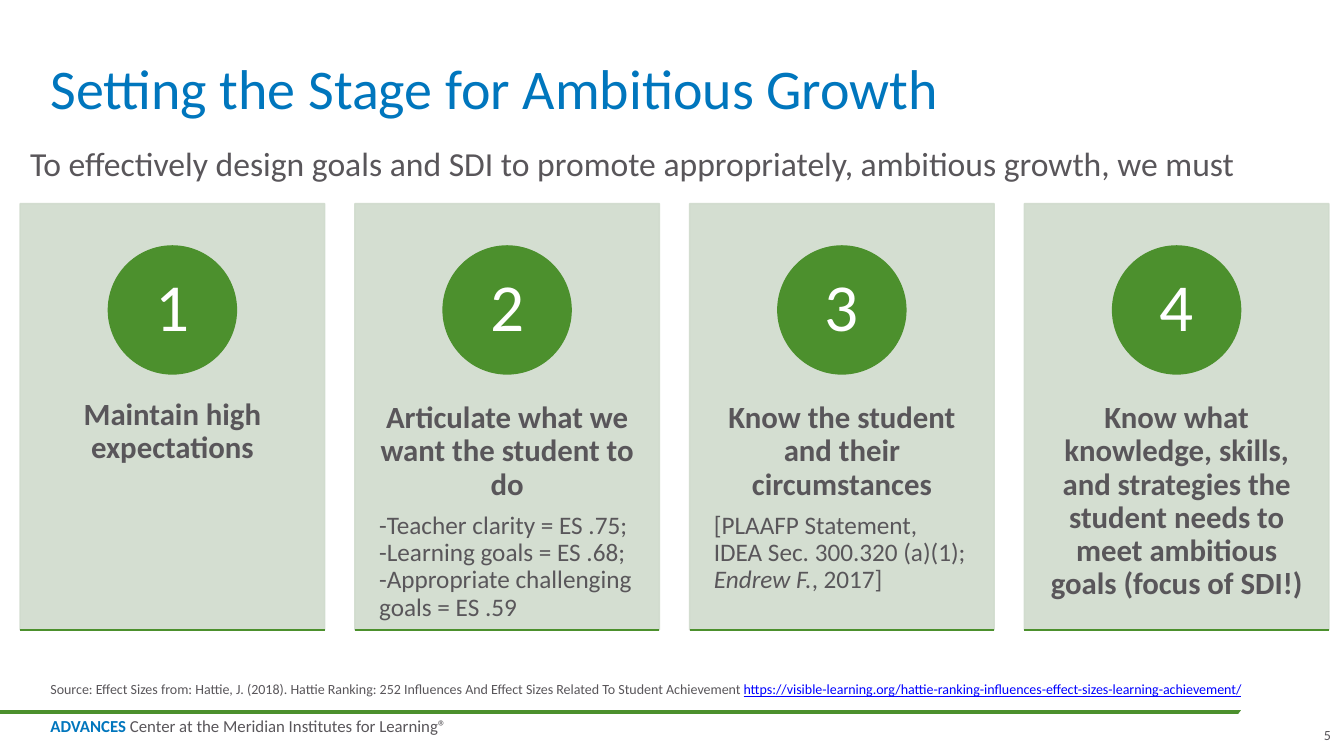
from lxml import etree
from pptx import Presentation
from pptx import util as u
from pptx.dml import color
from pptx.enum import shapes, text
from pptx.oxml import ns

COLORS = {"green": "4C902D", "blue": "0076BD", "gray": "59565A",
          "sage": "D0DBCD", "white": "FFFFFF", "link": "0000FF"}
FONT = "Calibri"
WIDTH, HEIGHT = 13.33, 7.5
MARGIN, GAP = 0.2, 0.3
CARD_WIDTH, CARD_TOP, CARD_HEIGHT = 3.02, 2.02, 4.23
CIRCLE_TOP, CIRCLE_SIZE = 2.44, 1.27
TEXT_TOP, TEXT_HEIGHT = 3.63, 2.54
RULE_TOP, RULE_END = 7.06, 13
CONTENT_LEFT, CONTENT_WIDTH = 0.5, 12.4

CARDS = [
    ("Maintain high expectations", []),
    ("Articulate what we want the student to do",
     [("-Teacher clarity = ES .75; -Learning goals = ES .68; "
       "-Appropriate challenging goals = ES .59", {})]),
    ("Know the student and their circumstances",
     [("[PLAAFP Statement, IDEA Sec. 300.320 (a)(1); ", {}),
       ("Endrew F.", {"italic": True}), (", 2017]", {})]),
    ("Know what knowledge, skills, and strategies the student needs to "
     "meet ambitious goals (focus of SDI!)", []),
]


def rgb(name):
    """Return the named palette colour."""
    return color.RGBColor.from_string(COLORS[name])


def inches(*lengths):
    """Convert lengths to slide units."""
    return [u.Inches(length) for length in lengths]


def set_alpha(paint, percent):
    """Set the opacity of a solid fill element."""
    tint = paint.find(".//" + ns.qn("a:srgbClr"))
    etree.SubElement(tint, ns.qn("a:alpha"), val=str(percent * 1000))


def add_shape(page, kind, area, paint, outlined=True, opacity=100, rotation=0):
    """Add a preset shape with a matching fill and outline."""
    shape = page.shapes.add_shape(kind, *inches(*area))
    shape.shadow.inherit = False
    shape.rotation = rotation
    shape.fill.solid()
    shape.fill.fore_color.rgb = rgb(paint)
    if outlined:
        shape.line.color.rgb = rgb(paint)
        shape.line.width = u.Pt(1)
    else:
        shape.line.fill.background()
    if opacity < 100:
        for fill in shape._element.spPr.iter(ns.qn("a:solidFill")):
            set_alpha(fill, opacity)
    return shape


def add_rule(page, left, top, right, weight):
    """Add a horizontal green line."""
    rule = page.shapes.add_connector(
        shapes.MSO_CONNECTOR.STRAIGHT, *inches(left, top, right, top))
    rule.line.color.rgb = rgb("green")
    rule.line.width = u.Pt(weight)
    etree.SubElement(rule._element.spPr, ns.qn("a:effectLst"))


def add_text(page, area, paragraphs, anchor="TOP", insets=(0, 0), wrap=True):
    """Add a text box holding paragraphs of (spans, format) pairs."""
    box = page.shapes.add_textbox(*inches(*area))
    frame = box.text_frame
    frame.word_wrap = wrap
    frame.vertical_anchor = getattr(text.MSO_ANCHOR, anchor)
    frame.margin_left = frame.margin_right = u.Inches(insets[0])
    frame.margin_top = frame.margin_bottom = u.Inches(insets[1])
    for index, (spans, layout) in enumerate(paragraphs):
        para = frame.add_paragraph() if index else frame.paragraphs[0]
        write(para, spans, **layout)


def write(para, spans, size, paint="gray", bold=False, align="LEFT",
          spacing=1.0, after=0):
    """Fill a paragraph with spans, each with its own overrides."""
    para.alignment = getattr(text.PP_ALIGN, align)
    para.line_spacing = spacing
    para.space_after = u.Pt(after)
    for words, changes in spans:
        span = para.add_run()
        span.text = words
        font = span.font
        font.name = FONT
        font.size = u.Pt(size)
        font.bold = changes.get("bold", bold)
        font.italic = changes.get("italic", False)
        font.underline = changes.get("underline", False)
        font.color.rgb = rgb(changes.get("paint", paint))


def add_card(page, column, heading, details):
    """Add a numbered card in the given column."""
    left = MARGIN + column * (CARD_WIDTH + GAP)
    circle_left = left + (CARD_WIDTH - CIRCLE_SIZE) / 2
    circle = (circle_left, CIRCLE_TOP, CIRCLE_SIZE, CIRCLE_SIZE)
    preset = shapes.MSO_SHAPE
    add_shape(page, preset.RECTANGLE,
              (left, CARD_TOP, CARD_WIDTH, CARD_HEIGHT), "sage", opacity=90)
    paragraphs = [([(heading, {})], dict(size=22, bold=True, align="CENTER",
                                         spacing=0.9, after=7.7))]
    if details:
        paragraphs.append((details, dict(size=18, spacing=0.9)))
    add_text(page, (left, TEXT_TOP, CARD_WIDTH, TEXT_HEIGHT), paragraphs,
             insets=(0.24, 0.36))
    add_shape(page, preset.OVAL, circle, "green")
    add_text(page, circle,
             [([(str(column + 1), {})],
               dict(size=48, paint="white", align="CENTER", spacing=0.9))],
             anchor="MIDDLE", insets=(0.1, 0.01))
    add_rule(page, left, CARD_TOP + CARD_HEIGHT, left + CARD_WIDTH, 1)


def add_footer(page):
    """Add the footer rule with its cut end and the centre name."""
    add_rule(page, 0, RULE_TOP, RULE_END, 3)
    add_shape(page, shapes.MSO_SHAPE.OVAL, (12.16, 6.77, 1.19, 0.58), "white",
              outlined=False, rotation=332.1)
    add_text(page, (CONTENT_LEFT, 7.13, 4.02, 0.17),
             [([("ADVANCES", {"bold": True, "paint": "blue"}),
                (" Center at the Meridian Institutes for Learning®", {})],
               dict(size=12, spacing=0.85))], wrap=False)


def main():
    """Build the slide and save it."""
    deck = Presentation()
    deck.slide_width, deck.slide_height = inches(WIDTH, HEIGHT)
    page = deck.slides.add_slide(deck.slide_layouts[6])
    add_footer(page)
    add_text(page, (CONTENT_LEFT, 0, CONTENT_WIDTH, 1.21),
             [([("Setting the Stage for Ambitious Growth", {})],
               dict(size=40, paint="blue", spacing=0.9))], anchor="BOTTOM")
    add_text(page, (MARGIN, 1.37, 12.7, 0.91),
             [([("To effectively design goals and SDI to promote "
                 "appropriately, ambitious growth, we must", {})],
               dict(size=24))], insets=(0.1, 0.05))
    for column, (heading, details) in enumerate(CARDS):
        add_card(page, column, heading, details)
    add_text(page, (CONTENT_LEFT, 6.71, CONTENT_WIDTH, 0.21),
             [([("Source: Effect Sizes from: Hattie, J. (2018). Hattie "
                 "Ranking: 252 Influences And Effect Sizes Related To "
                 "Student Achievement ", {}),
                ("https://visible-learning.org/hattie-ranking-influences-"
                 "effect-sizes-learning-achievement/",
                 {"paint": "link", "underline": True})],
               dict(size=10))], anchor="BOTTOM")
    add_text(page, (13.03, 7.2, 0.17, 0.17),
             [([("5", {})], dict(size=10, align="RIGHT"))],
             anchor="BOTTOM", wrap=False)
    deck.save("out.pptx")


if __name__ == "__main__":
    main()
